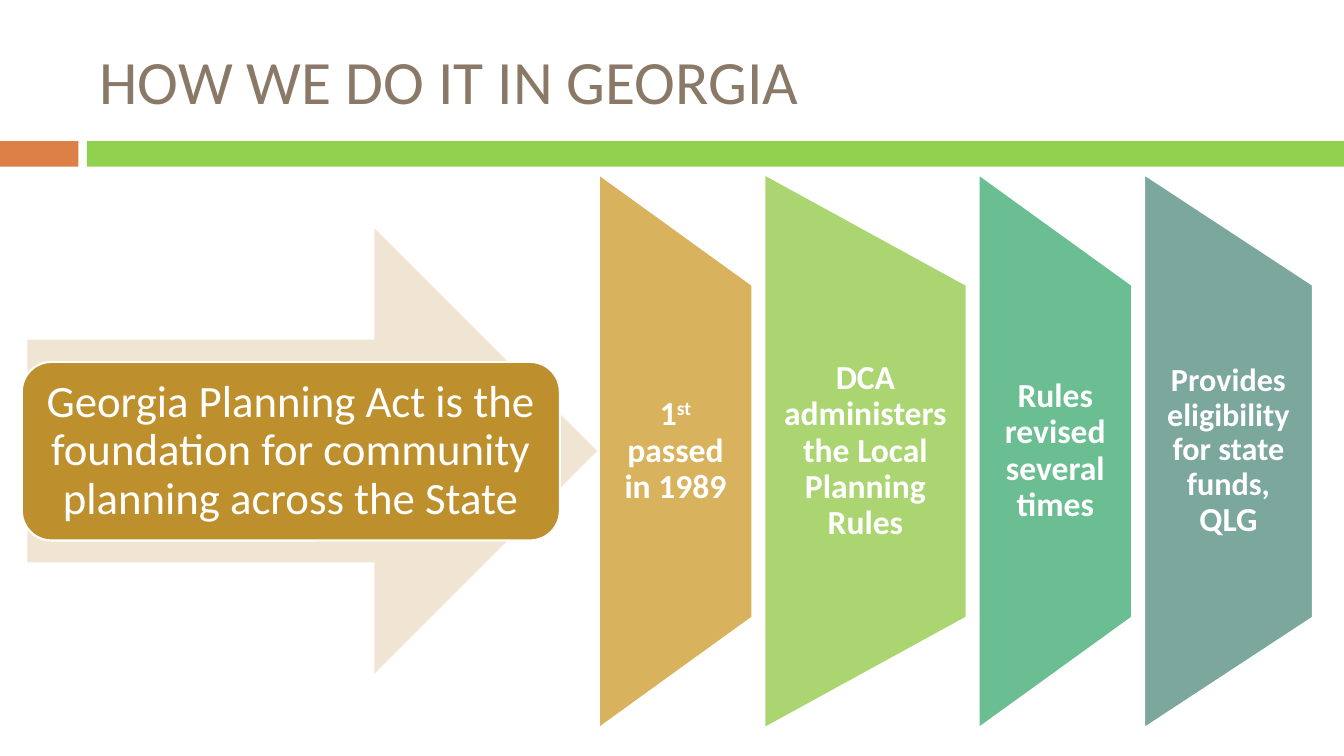
from pptx import Presentation
from pptx.dml.color import RGBColor
from pptx.enum.shapes import MSO_SHAPE
from pptx.enum.text import MSO_ANCHOR, PP_ALIGN
from pptx.util import Cm, Pt

RECTANGLE = MSO_SHAPE.RECTANGLE
ROUNDED = MSO_SHAPE.ROUNDED_RECTANGLE
ARROW = MSO_SHAPE.RIGHT_ARROW
PANEL = MSO_SHAPE.FLOWCHART_MANUAL_OPERATION
MIDDLE = MSO_ANCHOR.MIDDLE
LEFT, CENTER = PP_ALIGN.LEFT, PP_ALIGN.CENTER

deck = Presentation()
deck.slide_width, deck.slide_height = Cm(33.87), Cm(19.05)
slide = deck.slides.add_slide(deck.slide_layouts[5])


def add_block(kind, left, top, width, height, fill, outlined=False):
    block = slide.shapes.add_shape(kind, Cm(left), Cm(top), Cm(width), Cm(height))
    block.shadow.inherit = False
    block.fill.solid()
    block.fill.fore_color.rgb = RGBColor.from_string(fill)
    if outlined:
        block.line.color.rgb = RGBColor.from_string("FFFFFF")
        block.line.width = Pt(1.5)
    else:
        block.line.fill.background()
    return block


def write(frame, *parts, color="FFFFFF", bold=False, align=CENTER, spacing=0.9,
          margin_x=0.25, margin_y=0.13):
    """Fill a frame with one paragraph; each part is (text, size, baseline in 1/1000 %)."""
    frame.word_wrap = True
    frame.vertical_anchor = MIDDLE
    frame.margin_left = frame.margin_right = Cm(margin_x)
    frame.margin_top = frame.margin_bottom = Cm(margin_y)
    paragraph = frame.paragraphs[0]
    paragraph.alignment = align
    paragraph.line_spacing = spacing
    for text, size, baseline in parts:
        run = paragraph.add_run()
        run.text = text
        run.font.name = "Calibri"
        run.font.size = Pt(size)
        run.font.bold = bold
        run.font.color.rgb = RGBColor.from_string(color)
        if baseline:
            run.font._element.set("baseline", str(baseline))


# Title and divider band
add_block(RECTANGLE, 0, 3.56, 1.98, 0.64, "DD8047")
add_block(RECTANGLE, 2.19, 3.56, 31.68, 0.64, "92D050")
title = slide.shapes.title
title.left, title.top, title.width, title.height = Cm(2.26), Cm(0.64), Cm(30.2), Cm(2.74)
write(title.text_frame, ("HOW WE DO IT IN GEORGIA", 44, 0),
      color="8A7967", align=LEFT, spacing=1.0)

# Foundation statement on its arrow
add_block(ARROW, 0.69, 5.75, 14.36, 11.23, "F0E4D2")
foundation = add_block(ROUNDED, 0.55, 9.12, 13.56, 4.5, "BD902D", outlined=True)
write(foundation.text_frame,
      ("Georgia Planning Act is the foundation for community planning across the State", 32, 0),
      margin_x=0.33, margin_y=0.33)

# Milestone panels: width, fill, text parts
milestones = [
    (3.87, "D8B25C", [("1", 24, 0), ("st", 24, 30000), (" passed in 1989", 24, 0)]),
    (5.1, "AAD571", [("DCA administers the Local Planning Rules", 24, 0)]),
    (3.87, "6ABE92", [("Rules revised several times", 24, 0)]),
    (4.26, "7BA79D", [("Provides eligibility for state funds, ", 23, 0), ("QLG", 24, 0)]),
]
panel_height, panel_middle, panel_gap = 13.97, 11.37, 0.3
label_height = panel_height * 0.6
left = 15.09
for width, fill, parts in milestones:
    # The panel is laid out flat around its centre, then turned on its side
    panel = add_block(PANEL, left + (width - panel_height) / 2, panel_middle - width / 2,
                      panel_height, width, fill, outlined=True)
    panel.rotation = 270
    label = slide.shapes.add_textbox(Cm(left), Cm(panel_middle - label_height / 2),
                                     Cm(width), Cm(label_height))
    write(label.text_frame, *parts, bold=True, margin_x=0.42, margin_y=0)
    left += width + panel_gap

deck.save("out.pptx")
